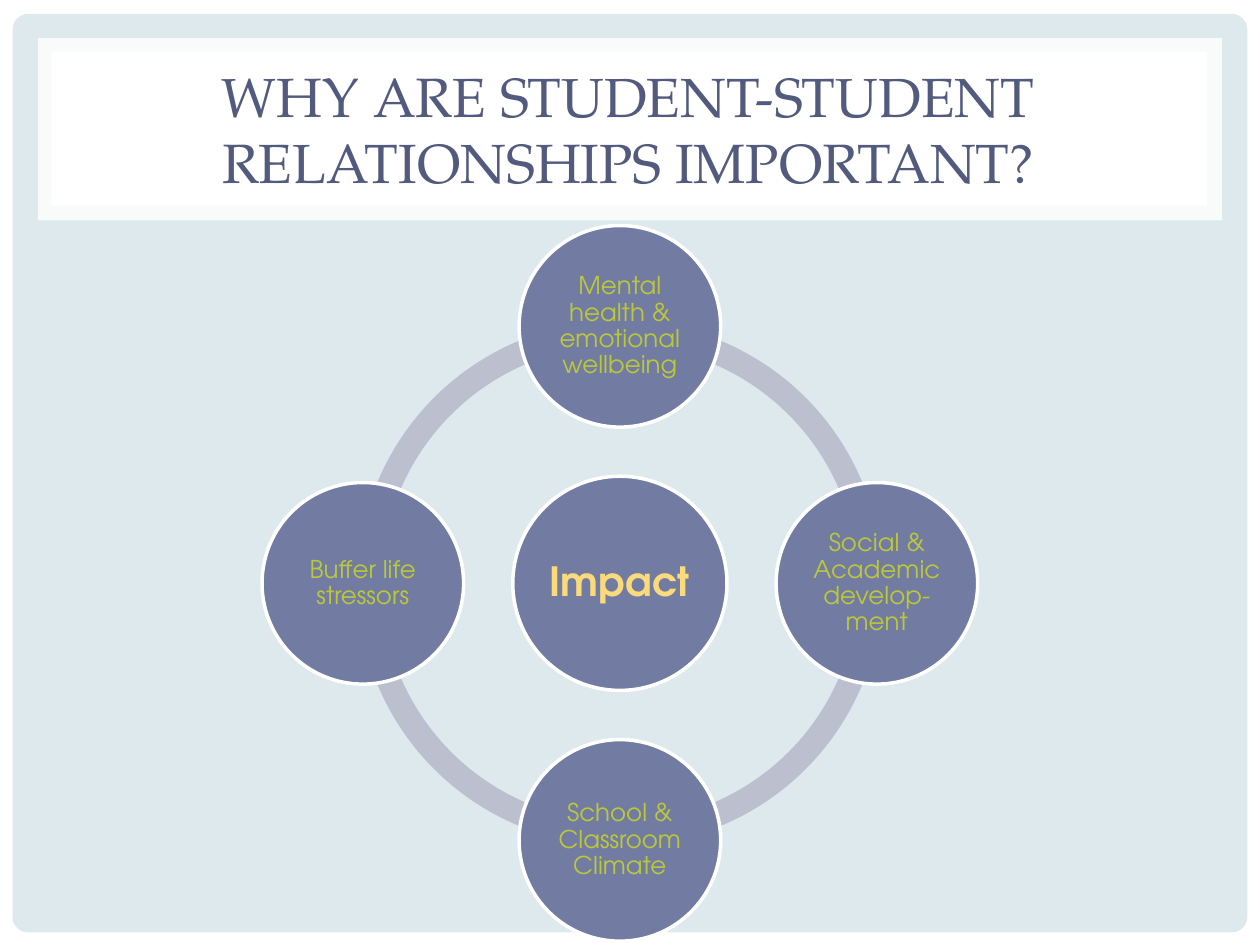
from dataclasses import dataclass
from math import cos, radians, sin
from typing import Optional

from lxml import etree
from pptx import Presentation
from pptx.dml.color import RGBColor
from pptx.enum.shapes import MSO_SHAPE
from pptx.enum.text import MSO_ANCHOR, PP_ALIGN
from pptx.oxml.ns import qn
from pptx.util import Inches, Pt

RECTANGLE = MSO_SHAPE.RECTANGLE
ROUNDED = MSO_SHAPE.ROUNDED_RECTANGLE
OVAL = MSO_SHAPE.OVAL
BLOCK_ARC = MSO_SHAPE.BLOCK_ARC
MIDDLE = MSO_ANCHOR.MIDDLE
CENTER = PP_ALIGN.CENTER

WHITE = RGBColor(0xFF, 0xFF, 0xFF)
PALE_BLUE = RGBColor(0xDD, 0xE9, 0xEC)
TITLE_BLUE = RGBColor(0x52, 0x5B, 0x7E)
CIRCLE_BLUE = RGBColor(0x72, 0x7C, 0xA3)
RING_GREY = RGBColor(0xBC, 0xBF, 0xCE)
YELLOW = RGBColor(0xFA, 0xDA, 0x7A)
GREEN = RGBColor(0xBC, 0xC8, 0x38)

TITLE_FONT = "TeX Gyre Pagella"
BODY_FONT = "TeX Gyre Adventor"

# Cycle geometry, in inches
CENTER_X, CENTER_Y = 4.92, 4.63
ORBIT = 2.04
RING_SIZE = 4.17
HUB_SIZE, NODE_SIZE = 1.7, 1.6


@dataclass
class Panel:
    left: float
    top: float
    width: float
    height: float
    color: RGBColor
    kind: int = RECTANGLE
    corner: Optional[float] = None
    opacity: Optional[int] = None


@dataclass
class Node:
    text: str
    angle: int  # degrees clockwise from the right


PANELS = [
    Panel(0, 0, 10, 7.5, WHITE),
    Panel(0.1, 0.11, 9.8, 7.29, PALE_BLUE, kind=ROUNDED, corner=0.017),
    Panel(0.3, 0.3, 9.4, 1.45, WHITE, opacity=83),
    Panel(0.41, 0.41, 9.17, 1.22, WHITE),
]
NODES = [
    Node("Mental health & emotional wellbeing", 270),
    Node("Social & Academic develop-ment", 0),
    Node("School & Classroom Climate", 90),
    Node("Buffer life stressors", 180),
]


def add_filled(slide, kind: int, left: float, top: float, width: float,
               height: float, color: RGBColor):
    shape = slide.shapes.add_shape(
        kind, Inches(left), Inches(top), Inches(width), Inches(height))
    shape.shadow.inherit = False
    shape.fill.solid()
    shape.fill.fore_color.rgb = color
    shape.line.fill.background()
    return shape


def write_text(shape, text: str, *, font: str, size: float, color: RGBColor,
               bold: bool = False, inset: Optional[float] = None,
               line_spacing: Optional[float] = None) -> None:
    frame = shape.text_frame
    frame.word_wrap = True
    frame.vertical_anchor = MIDDLE
    if inset is not None:
        frame.margin_left = frame.margin_right = Inches(inset)
        frame.margin_top = frame.margin_bottom = Inches(inset)
    paragraph = frame.paragraphs[0]
    paragraph.alignment = CENTER
    paragraph.line_spacing = line_spacing
    run = paragraph.add_run()
    run.text = text
    run.font.name = font
    run.font.size = Pt(size)
    run.font.bold = bold
    run.font.color.rgb = color


def add_panel(slide, panel: Panel) -> None:
    shape = add_filled(slide, panel.kind, panel.left, panel.top,
                       panel.width, panel.height, panel.color)
    if panel.corner is not None:
        shape.adjustments[0] = panel.corner
    if panel.opacity is not None:
        color = shape.fill._xPr.find(".//" + qn("a:srgbClr"))
        etree.SubElement(color, qn("a:alpha")).set(
            "val", str(panel.opacity * 1000))


def add_ring_quarter(slide, start: int) -> None:
    arc = add_filled(slide, BLOCK_ARC, CENTER_X - RING_SIZE / 2,
                     CENTER_Y - RING_SIZE / 2, RING_SIZE, RING_SIZE, RING_GREY)
    # Arc angles are stored as 60000ths of a degree, scaled by 100000
    arc.adjustments[0] = start * 0.6
    arc.adjustments[1] = (start + 90) % 360 * 0.6
    arc.adjustments[2] = 0.046


def add_circle(slide, center_x: float, center_y: float, size: float):
    circle = add_filled(slide, OVAL, center_x - size / 2, center_y - size / 2,
                        size, size, CIRCLE_BLUE)
    circle.line.color.rgb = WHITE
    circle.line.width = Pt(2)
    return circle


def main() -> None:
    presentation = Presentation()
    presentation.slide_width = Inches(10)
    presentation.slide_height = Inches(7.5)
    slide = presentation.slides.add_slide(presentation.slide_layouts[6])
    slide.background.fill.solid()
    slide.background.fill.fore_color.rgb = PALE_BLUE

    # Frame and title band
    for panel in PANELS:
        add_panel(slide, panel)
    title = slide.shapes.add_textbox(
        Inches(0.47), Inches(0.45), Inches(9.03), Inches(1.14))
    write_text(title, "WHY ARE STUDENT-STUDENT RELATIONSHIPS IMPORTANT?",
               font=TITLE_FONT, size=31.5, color=TITLE_BLUE)

    # Ring behind the circles
    for start in (180, 90, 0, 270):
        add_ring_quarter(slide, start)

    # Hub and the four nodes around it
    hub = add_circle(slide, CENTER_X, CENTER_Y, HUB_SIZE)
    write_text(hub, "Impact", font=BODY_FONT, size=23, color=YELLOW,
               bold=True, inset=0.03, line_spacing=0.9)
    for node in NODES:
        angle = radians(node.angle)
        circle = add_circle(slide, CENTER_X + ORBIT * cos(angle),
                            CENTER_Y + ORBIT * sin(angle), NODE_SIZE)
        write_text(circle, node.text, font=BODY_FONT, size=14, color=GREEN,
                   inset=0.02, line_spacing=0.9)

    presentation.save("out.pptx")


if __name__ == "__main__":
    main()
